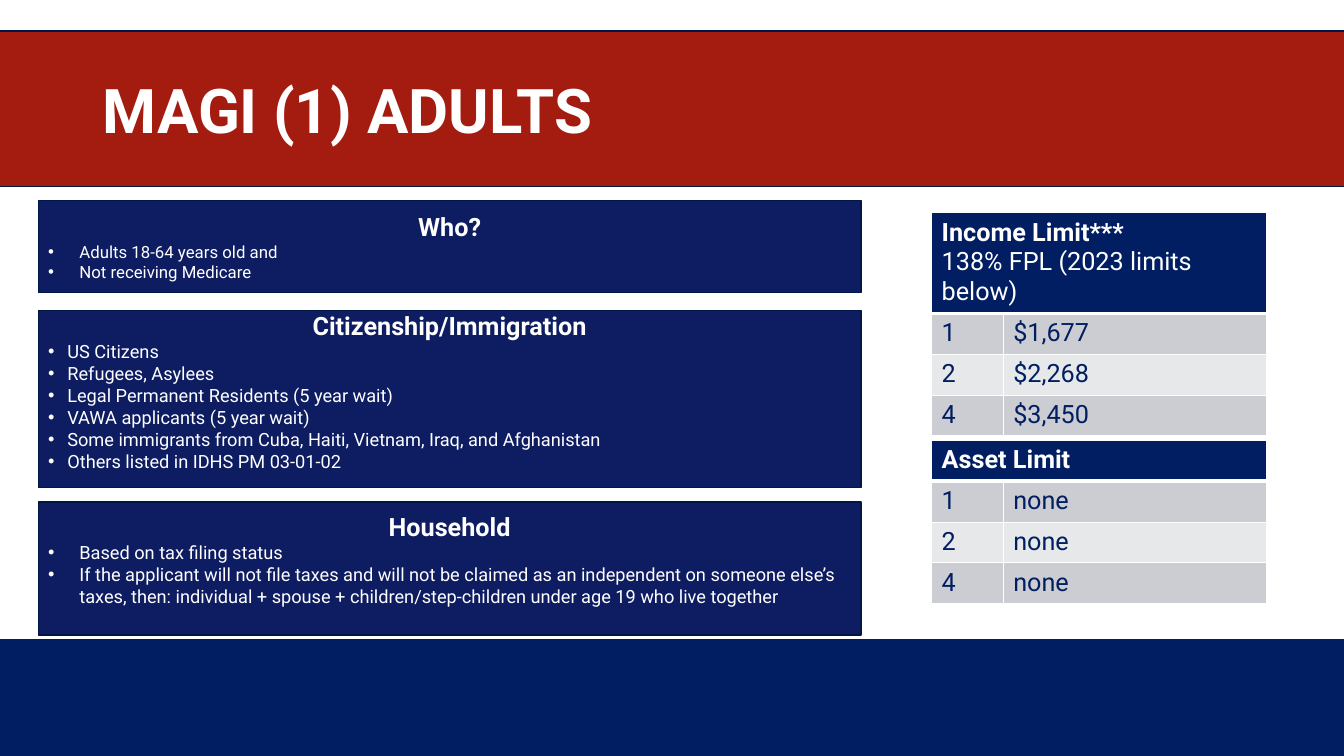
from lxml import etree
from pptx import Presentation
from pptx.dml.color import RGBColor
from pptx.enum.shapes import MSO_SHAPE
from pptx.enum.text import MSO_ANCHOR, PP_ALIGN
from pptx.oxml.ns import qn
from pptx.util import Inches, Pt

RECTANGLE = MSO_SHAPE.RECTANGLE
TOP, MIDDLE = MSO_ANCHOR.TOP, MSO_ANCHOR.MIDDLE
LEFT, CENTER = PP_ALIGN.LEFT, PP_ALIGN.CENTER

FONT = "Roboto"
WHITE, NAVY, RED = "FFFFFF", "001E61", "A41B10"
PANEL_BLUE, OUTLINE = "0E1D61", "001648"
ROW_FILLS = ["CCCDD2", "E7E8EA"]
ROW_HEIGHT = Inches(1.62) // 4

PANELS = [
    {"top": 1.99, "height": 0.91, "inset": 0.11, "heading": "Who?", "size": 12, "indent": 0.31,
     "items": ["Adults 18-64 years old and", "Not receiving Medicare"]},
    {"top": 3.08, "height": 1.76, "inset": 0, "heading": "Citizenship/Immigration", "size": 13, "indent": 0.19,
     "items": ["US Citizens", "Refugees, Asylees", "Legal Permanent Residents (5 year wait)",
               "VAWA applicants (5 year wait)",
               "Some immigrants from Cuba, Haiti, Vietnam, Iraq, and Afghanistan",
               "Others listed in IDHS PM 03-01-02"]},
    {"top": 4.98, "height": 1.32, "inset": 0.09, "heading": "Household", "size": 13, "indent": 0.31,
     "items": ["Based on tax filing status",
               "If the applicant will not file taxes and will not be claimed as an independent on "
               "someone else’s taxes, then: individual + spouse + children/step-children under "
               "age 19 who live together"]},
]
INCOME_ROWS = [("1", "$1,677"), ("2", "$2,268"), ("4", "$3,450")]
ASSET_ROWS = [(household_size, "none") for household_size in ("1", "2", "4")]


def color(hex_value):
    """Return a colour from a hex string."""
    return RGBColor.from_string(hex_value)


def add_rectangle(slide, left, top, width, height, fill, line=None):
    """Add a flat rectangle, outlined if a line colour is given."""
    shape = slide.shapes.add_shape(RECTANGLE, Inches(left), Inches(top), Inches(width), Inches(height))
    shape.shadow.inherit = False
    shape.fill.solid()
    shape.fill.fore_color.rgb = color(fill)
    if line:
        shape.line.color.rgb = color(line)
        shape.line.width = Pt(1)
    else:
        shape.line.fill.background()
    return shape


def add_bullet(paragraph, indent):
    """Give a paragraph a round bullet with a hanging indent."""
    properties = paragraph._p.get_or_add_pPr()
    properties.set("marL", str(Inches(indent)))
    properties.set("indent", str(-Inches(indent)))
    etree.SubElement(properties, qn("a:buFont")).set("typeface", "Arial")
    etree.SubElement(properties, qn("a:buChar")).set("char", "•")


def write_text(frame, text, size=18, text_color=WHITE, bold=False, align=LEFT, indent=None):
    """Write text into the empty first paragraph or into a new one."""
    first = frame.paragraphs[0]
    paragraph = frame.add_paragraph() if first.runs else first
    paragraph.alignment = align
    if indent:
        add_bullet(paragraph, indent)
    run = paragraph.add_run()
    run.text = text
    run.font.name = FONT
    run.font.size = Pt(size)
    run.font.bold = bold
    run.font.color.rgb = color(text_color)
    return paragraph


def add_title(slide, text):
    """Add the slide title."""
    frame = slide.shapes.add_textbox(Inches(0.92), Inches(0.4), Inches(11.5), Inches(1.45)).text_frame
    frame.word_wrap = True
    frame.vertical_anchor = MIDDLE
    write_text(frame, text, size=44, bold=True).line_spacing = 0.9


def add_panel(slide, panel):
    """Add a blue panel with a heading and bullets."""
    shape = add_rectangle(slide, 0.38, panel["top"], 8.16, panel["height"], PANEL_BLUE, OUTLINE)
    frame = shape.text_frame
    frame.word_wrap = True
    frame.vertical_anchor = TOP
    frame.margin_top = Inches(panel["inset"])
    frame.margin_bottom = 0
    write_text(frame, panel["heading"], bold=True, align=CENTER)
    for item in panel["items"]:
        write_text(frame, item, size=panel["size"], indent=panel["indent"])


def style_cell(cell, fill, bottom_width=1):
    """Give a cell white borders and a solid fill."""
    properties = cell._tc.get_or_add_tcPr()
    for side, width in (("L", 1), ("R", 1), ("T", 1), ("B", bottom_width)):
        border = etree.SubElement(properties, qn(f"a:ln{side}"), w=str(Pt(width)))
        border_fill = etree.SubElement(border, qn("a:solidFill"))
        etree.SubElement(border_fill, qn("a:srgbClr"), val=WHITE)
    cell.fill.solid()
    cell.fill.fore_color.rgb = color(fill)


def add_limit_table(slide, top, header_height, heading, rows, note=None):
    """Add a table of limits by household size under a merged header."""
    height = header_height + ROW_HEIGHT * len(rows)
    table = slide.shapes.add_table(len(rows) + 1, 2, Inches(9.24), Inches(top), Inches(3.32), height).table
    for column, width in zip(table.columns, (0.71, 2.61)):
        column.width = Inches(width)
    for row in table.rows:
        row.height = ROW_HEIGHT
    table.rows[0].height = header_height
    header = table.cell(0, 0)
    header.merge(table.cell(0, 1))
    for column_index in range(2):
        style_cell(table.cell(0, column_index), NAVY, bottom_width=3)
    write_text(header.text_frame, heading, bold=True)
    if note:
        write_text(header.text_frame, note)
    for row_index, values in enumerate(rows):
        for column_index, value in enumerate(values):
            cell = table.cell(row_index + 1, column_index)
            style_cell(cell, ROW_FILLS[row_index % 2])
            write_text(cell.text_frame, value, text_color=NAVY)


def main():
    """Build and save the slide."""
    presentation = Presentation()
    presentation.slide_width = Inches(13.33)
    presentation.slide_height = Inches(7.5)
    slide = presentation.slides.add_slide(presentation.slide_layouts[6])
    add_rectangle(slide, 0, 6.34, 13.33, 1.16, NAVY)
    add_rectangle(slide, -0.38, 0.31, 13.83, 1.54, RED, OUTLINE)
    add_title(slide, "MAGI (1) ADULTS")
    for panel in PANELS:
        add_panel(slide, panel)
    add_limit_table(slide, 2.11, Inches(0.97), "Income Limit***", INCOME_ROWS,
                    note="138% FPL (2023 limits below)")
    add_limit_table(slide, 4.37, ROW_HEIGHT, "Asset Limit", ASSET_ROWS)
    presentation.save("out.pptx")


if __name__ == "__main__":
    main()
